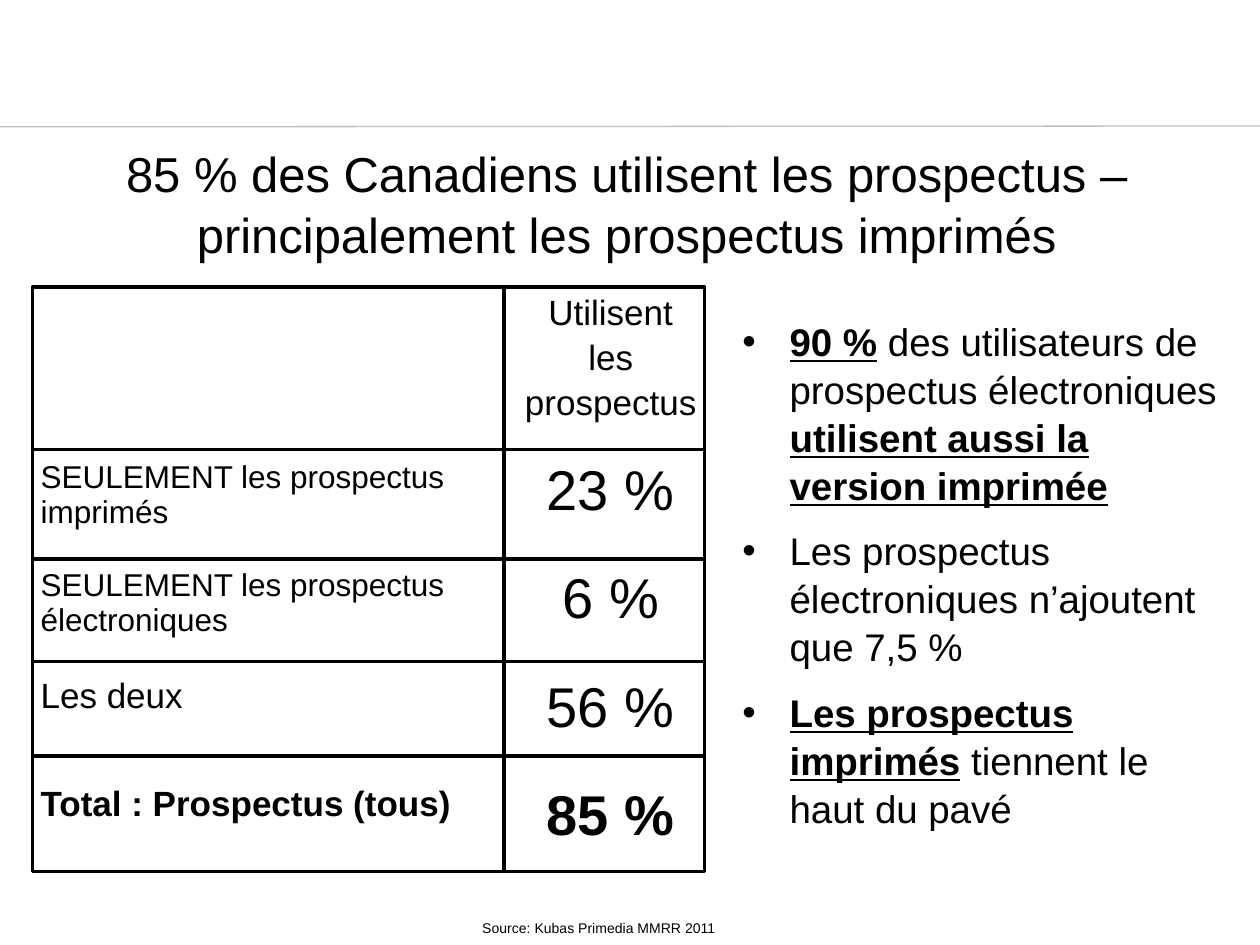
from lxml import etree
from pptx import Presentation
from pptx.dml.color import RGBColor
from pptx.enum.shapes import MSO_CONNECTOR, MSO_SHAPE
from pptx.enum.text import MSO_ANCHOR, MSO_AUTO_SIZE, PP_ALIGN
from pptx.oxml.ns import qn
from pptx.util import Pt

COLORS = {"text": "000000", "grid": "000000", "rule": "BFBFBF", "cell": "FFFFFF"}
FONT = "Arial"

TITLE = "85 % des Canadiens utilisent les prospectus – principalement les prospectus imprimés"
SOURCE = "Source: Kubas Primedia MMRR 2011"
HEADER = ["Utilisent", "les", "prospectus"]
# label, label size, share, bold
USAGE = [
    ("SEULEMENT les prospectus imprimés", 18, "23 %", False),
    ("SEULEMENT les prospectus électroniques", 18, "6 %", False),
    ("Les deux", 20, "56 %", False),
    ("Total : Prospectus (tous)", 20, "85 %", True),
]
# each finding is a list of (wording, emphasised)
FINDINGS = [
    [("90 %", True), (" des utilisateurs de prospectus électroniques ", False),
     ("utilisent aussi la version imprimée", True)],
    [("Les prospectus électroniques n’ajoutent que 7,5 %", False)],
    [("Les prospectus imprimés", True), (" tiennent le haut du pavé", False)],
]

TABLE_LEFT, TABLE_TOP = 16, 164
COLUMN_WIDTHS = [276, 114]
HEADER_HEIGHT, ROW_HEIGHT = 95, 62
FRAME_LEFT, FRAME_WIDTH, FRAME_HEIGHT = 18.5, 384, 334
ROW_RULES = [257, 319.5, 378, 432]
COLUMN_RULE = 288


def rgb(name):
    return RGBColor.from_string(COLORS[name])


def style(paragraph, size, bold=None, align=None):
    font = paragraph.font
    font.name, font.size, font.bold = FONT, Pt(size), bold
    font.color.rgb = rgb("text")
    paragraph.alignment = align


def place(shape, left, top, width, height):
    shape.left, shape.top = Pt(left), Pt(top)
    shape.width, shape.height = Pt(width), Pt(height)


def add_rule(slide, start, end, color, weight):
    rule = slide.shapes.add_connector(
        MSO_CONNECTOR.STRAIGHT, *(Pt(v) for v in (*start, *end)))
    rule.line.color.rgb = rgb(color)
    rule.line.width = Pt(weight)
    etree.SubElement(rule._element.spPr, qn("a:effectLst"))


def fill_cell(cell, lines, size, bold=False, align=PP_ALIGN.LEFT):
    cell.fill.solid()
    cell.fill.fore_color.rgb = rgb("cell")
    cell.text = "\n".join(lines)
    for index, paragraph in enumerate(cell.text_frame.paragraphs):
        style(paragraph, size, bold, align)
        if index:
            paragraph.space_before = Pt(3.5)


def add_usage_table(slide):
    table = slide.shapes.add_table(
        len(USAGE) + 1, 2, Pt(TABLE_LEFT), Pt(TABLE_TOP), Pt(sum(COLUMN_WIDTHS)),
        Pt(HEADER_HEIGHT + ROW_HEIGHT * len(USAGE))).table
    table.first_row = table.horz_banding = False
    for column, width in zip(table.columns, COLUMN_WIDTHS):
        column.width = Pt(width)
    for index, row in enumerate(table.rows):
        row.height = Pt(ROW_HEIGHT if index else HEADER_HEIGHT)
    fill_cell(table.cell(0, 0), [], 20)
    fill_cell(table.cell(0, 1), HEADER, 20, align=PP_ALIGN.CENTER)
    for row, (label, size, share, bold) in enumerate(USAGE, start=1):
        fill_cell(table.cell(row, 0), [label], size, bold)
        fill_cell(table.cell(row, 1), [share], 32, bold, PP_ALIGN.CENTER)


def add_grid(slide):
    """Black frame and rules laid over the table."""
    frame = slide.shapes.add_shape(
        MSO_SHAPE.RECTANGLE, Pt(FRAME_LEFT), Pt(TABLE_TOP), Pt(FRAME_WIDTH), Pt(FRAME_HEIGHT))
    frame.shadow.inherit = False
    frame.fill.background()
    frame.line.color.rgb = rgb("grid")
    frame.line.width = Pt(2)
    for y in ROW_RULES:
        add_rule(slide, (FRAME_LEFT, y), (FRAME_LEFT + FRAME_WIDTH, y), "grid", 2)
    add_rule(slide, (COLUMN_RULE, TABLE_TOP), (COLUMN_RULE, TABLE_TOP + FRAME_HEIGHT), "grid", 2)


def fill_title(title):
    place(title, 0, 78, 716, 75)
    frame = title.text_frame
    frame.text = TITLE
    frame.auto_size = MSO_AUTO_SIZE.NONE
    frame.vertical_anchor = MSO_ANCHOR.MIDDLE
    style(frame.paragraphs[0], 28, align=PP_ALIGN.CENTER)
    frame.paragraphs[0].line_spacing = 1.04


def fill_findings(body):
    place(body, 417, 177, 291, 327)
    frame = body.text_frame
    frame.auto_size = MSO_AUTO_SIZE.NONE
    frame.vertical_anchor = MSO_ANCHOR.TOP
    for index, finding in enumerate(FINDINGS):
        paragraph = frame.add_paragraph() if index else frame.paragraphs[0]
        properties = paragraph._p.get_or_add_pPr()
        properties.set("marL", str(Pt(27)))
        properties.set("indent", str(Pt(-27)))
        etree.SubElement(properties, qn("a:buChar"), char="•")
        style(paragraph, 22)
        paragraph.line_spacing = 1.04
        paragraph.space_before = Pt(10 if index else 0)
        for wording, emphasised in finding:
            run = paragraph.add_run()
            run.text = wording
            run.font.bold = run.font.underline = emphasised


def add_source(slide):
    box = slide.shapes.add_textbox(Pt(268.5), Pt(522), Pt(152), Pt(17))
    box.text_frame.word_wrap = False
    box.text_frame.text = SOURCE
    style(box.text_frame.paragraphs[0], 8)


def main():
    deck = Presentation()
    deck.slide_width, deck.slide_height = Pt(720), Pt(540)
    slide = deck.slides.add_slide(deck.slide_layouts[1])
    add_rule(slide, (0, 72.5), (720, 72), "rule", 0.75)
    fill_title(slide.shapes.title)
    fill_findings(slide.placeholders[1])
    add_source(slide)
    add_usage_table(slide)
    add_grid(slide)
    deck.save("out.pptx")


if __name__ == "__main__":
    main()
